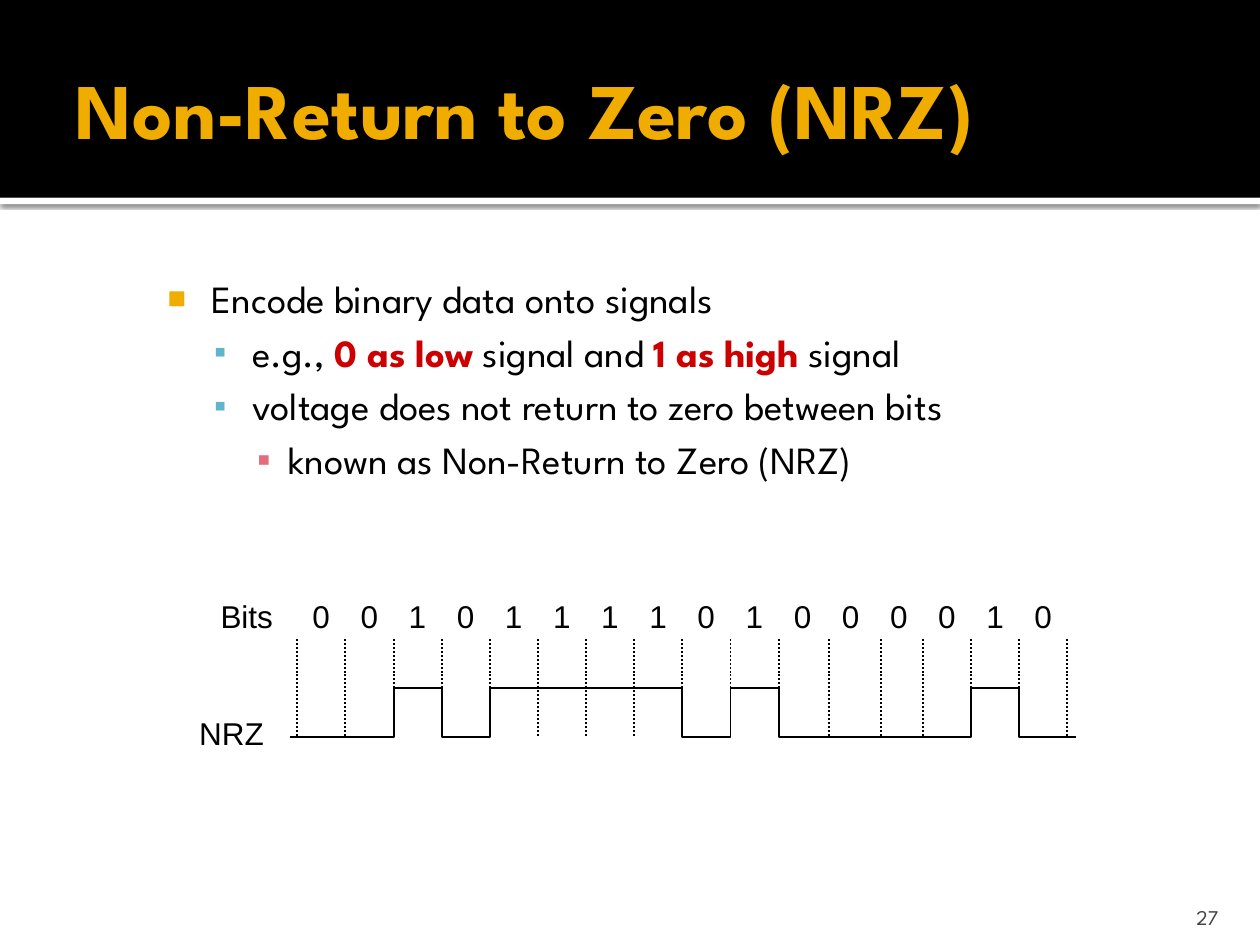
"""Build a slide on Non-Return to Zero encoding."""
from pptx import Presentation
from pptx.dml.color import RGBColor
from pptx.enum.dml import MSO_LINE
from pptx.enum.shapes import MSO_CONNECTOR, MSO_SHAPE
from pptx.enum.text import MSO_ANCHOR, MSO_AUTO_SIZE, PP_ALIGN
from pptx.oxml import parse_xml
from pptx.oxml.ns import nsdecls
from pptx.util import Inches, Pt

BITS = "0010111101000010"
LEFT, STEP = 2.36, 0.382
DRIFT = {11: 0.02, 12: 0.05}
HIGH, LOW = 5.46, 5.85
SIDES = ("margin_left", "margin_top", "margin_right", "margin_bottom")
PLACE = ("left", "top", "width", "height")
BULLETS = [
    {"char": "■", "color": "F0AD00", "size": 80, "margin": 0.48, "hang": -0.35},
    {"char": "▪", "color": "60B5CC", "size": 90, "margin": 0.8, "hang": -0.3},
    {"char": "▪", "color": "E66C7D", "size": 100, "margin": 1.09, "hang": -0.25},
]
POINTS = [
    (0, [("Encode binary data onto signals", False)]),
    (1, [("e.g., ", False), ("0 as low", True), (" signal and ", False),
         ("1 as high", True), (" signal", False)]),
    (1, [("voltage does not return to zero between bits", False)]),
    (2, [("known as Non-Return to Zero (NRZ)", False)]),
]


def tint(code):
    return RGBColor.from_string(code)


def put(item, values):
    for name, value in values.items():
        setattr(item, name, value)


def tick(index):
    return LEFT + index * STEP + DRIFT.get(index, 0)


class Deck:
    """Hold the style and the current slide."""
    head = {"name": "League Spartan", "size": Pt(45), "bold": True}
    text = {"name": "League Spartan", "size": Pt(22), "bold": False}
    label = {"name": "Arial", "size": Pt(18)}
    foot = {"name": "League Spartan", "size": Pt(12)}

    def __init__(self, slide):
        self.slide = slide
        self.shapes = slide.shapes

    def move(self, shape, box):
        put(shape, dict(zip(PLACE, map(Inches, box))))

    def frame(self, shape, pads, **extra):
        frame = shape.text_frame
        put(frame, {**dict(zip(SIDES, map(Inches, pads))),
                    "word_wrap": True, "auto_size": MSO_AUTO_SIZE.NONE, **extra})
        return frame

    def run(self, para, words, style, color="000000"):
        run = para.add_run()
        run.text = words
        put(run.font, style)
        run.font.color.rgb = tint(color)

    def band(self, box, color, shadow=False):
        shape = self.shapes.add_shape(MSO_SHAPE.RECTANGLE, *map(Inches, box))
        shape.shadow.inherit = False
        shape.fill.solid()
        shape.fill.fore_color.rgb = tint(color)
        shape.line.fill.background()
        if shadow:
            effects = shape._element.spPr.find("{*}effectLst")
            effects.append(parse_xml(
                f'<a:outerShdw {nsdecls("a")} blurRad="{Pt(2.5)}" dist="{Pt(0.8)}" '
                'dir="5400000" algn="tl" rotWithShape="0"><a:srgbClr val="000000">'
                '<a:alpha val="60000"/></a:srgbClr></a:outerShdw>'))
        self.shapes._spTree.insert(2, shape._element)

    def title(self, words, box):
        shape = self.shapes.title
        self.move(shape, box)
        frame = self.frame(shape, (0.1, 0.05, 0.05, 0.05),
                           vertical_anchor=MSO_ANCHOR.MIDDLE)
        para = frame.paragraphs[0]
        para.alignment = PP_ALIGN.LEFT
        self.run(para, words, self.head, "F0AD00")

    def bullet(self, para, look):
        props = para._p.get_or_add_pPr()
        props.set("marL", str(Inches(look["margin"])))
        props.set("indent", str(Inches(look["hang"])))
        for xml in (f'buClr {nsdecls("a")}><a:srgbClr val="{look["color"]}"/></a:buClr',
                    f'buSzPct {nsdecls("a")} val="{look["size"] * 1000}"/',
                    f'buFont {nsdecls("a")} typeface="Arial"/',
                    f'buChar {nsdecls("a")} char="{look["char"]}"/'):
            props.append(parse_xml(f"<a:{xml}>"))

    def body(self, points, box):
        shape = self.slide.placeholders[1]
        self.move(shape, box)
        frame = self.frame(shape, (0.06, 0.1, 0.1, 0.05))
        for index, (level, parts) in enumerate(points):
            para = frame.add_paragraph() if index else frame.paragraphs[0]
            para.level = level
            self.bullet(para, BULLETS[level])
            para.space_before = Pt(4.4 if index else 0)
            for words, strong in parts:
                self.run(para, words, {**self.text, "bold": strong},
                         "CC0000" if strong else "000000")

    def note(self, words, box, style, color="000000", pads=(0, 0, 0, 0),
             align=PP_ALIGN.LEFT, **extra):
        shape = self.shapes.add_textbox(*map(Inches, box))
        para = self.frame(shape, pads, **extra).paragraphs[0]
        para.alignment = align
        self.run(para, words, style, color)

    def stroke(self, line):
        line.color.rgb = tint("000000")
        line.width = Pt(1.13)

    def guide(self, left, top, bottom):
        line = self.shapes.add_connector(
            MSO_CONNECTOR.STRAIGHT, *map(Inches, (left, top, left, bottom)))
        line._element.spPr.append(parse_xml(f'<a:effectLst {nsdecls("a")}/>'))
        self.stroke(line.line)
        line.line.dash_style = MSO_LINE.ROUND_DOT

    def wave(self, points):
        spots = [(Inches(x), Inches(y)) for x, y in points]
        pen = self.shapes.build_freeform(*spots[0])
        pen.add_line_segments(spots[1:], close=False)
        shape = pen.convert_to_shape()
        shape.shadow.inherit = False
        shape.fill.background()
        self.stroke(shape.line)


def main():
    show = Presentation()
    put(show, {"slide_width": Inches(10), "slide_height": Inches(7.5)})
    deck = Deck(show.slides.add_slide(show.slide_layouts[1]))
    deck.band((0, 0, 10, 1.57), "000000")
    deck.band((0, 1.57, 10, 0.05), "FFFFFF", shadow=True)
    deck.title("Non-Return to Zero (NRZ)", (0.5, 0.17, 9, 1.37))
    deck.body(POINTS, (1.14, 2.08, 8.11, 2.46))

    deck.note("Bits", (1.75, 4.74, 0.42, 0.3), deck.label, word_wrap=False)
    deck.note("NRZ", (1.58, 5.67, 0.51, 0.3), deck.label, word_wrap=False)
    for index, bit in enumerate(BITS):
        deck.note(bit, (LEFT + 0.12 + index * STEP, 4.74, 0.14, 0.3),
                  deck.label, word_wrap=False)
    for index in range(len(BITS) + 1):
        deck.guide(tick(index), 5.07, LOW)

    levels = [HIGH if bit == "1" else LOW for bit in BITS]
    points = [(2.3, levels[0])]
    for index, (old, new) in enumerate(zip(levels, levels[1:]), 1):
        if old != new:
            points += [(tick(index), old), (tick(index), new)]
    deck.wave(points + [(8.54, levels[-1])])

    deck.note("27", (8.97, 7.08, 0.8, 0.3), deck.foot, "454545",
              (0.1, 0.05, 0.1, 0), PP_ALIGN.RIGHT,
              vertical_anchor=MSO_ANCHOR.BOTTOM)
    show.save("out.pptx")


if __name__ == "__main__":
    main()
